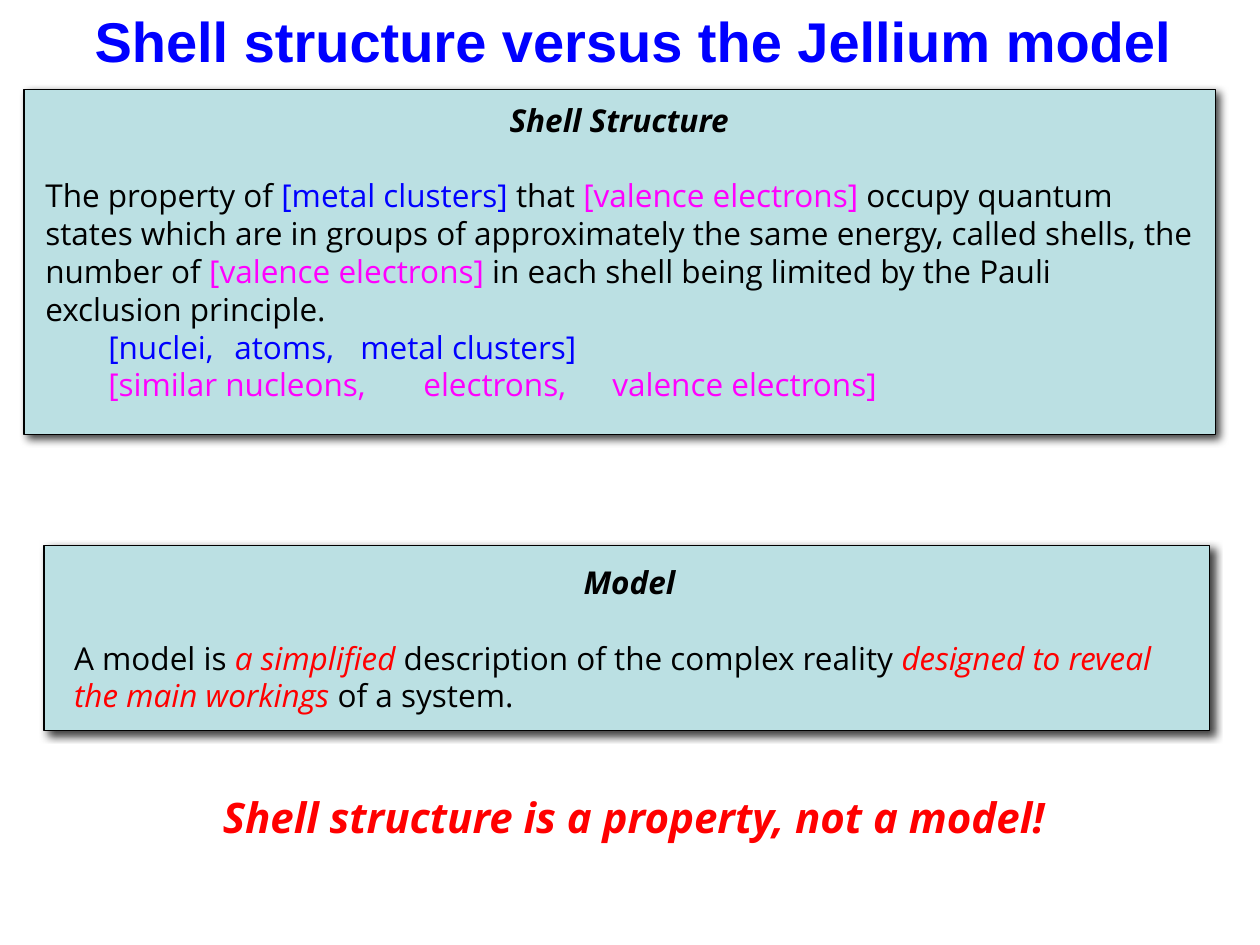
from lxml import etree
from pptx import Presentation
from pptx.dml.color import RGBColor
from pptx.enum import shapes, text
from pptx.oxml import ns
from pptx.util import Inches, Pt

BLACK = RGBColor(0x00, 0x00, 0x00)
BLUE = RGBColor(0x00, 0x00, 0xFF)
PINK = RGBColor(0xFF, 0x00, 0xFF)
RED = RGBColor(0xFF, 0x00, 0x00)
TEAL = RGBColor(0xBB, 0xE0, 0xE3)
CENTER = text.PP_ALIGN.CENTER
LEFT = text.PP_ALIGN.LEFT


def sub(node, tag, **attrs):
    child = etree.SubElement(node, ns.qn(tag))
    for key, val in attrs.items():
        child.set(key, str(val))
    return child


class Page:
    font = "Open Sans"
    size = 18
    gap = 21.6

    def __init__(self, slide):
        self.slide = slide

    def panel(self, *box):
        shape = self.slide.shapes.add_shape(
            shapes.MSO_SHAPE.RECTANGLE, *map(Inches, box))
        shape.fill.solid()
        shape.fill.fore_color.rgb = TEAL
        shape.line.color.rgb = BLACK
        shape.line.width = Pt(0.75)
        shape.shadow.inherit = False
        effects = shape._element.spPr.find(ns.qn("a:effectLst"))
        shade = sub(effects, "a:outerShdw", blurRad=Pt(5), dist=Pt(3),
                    dir=45 * 60000, algn="tl", rotWithShape=0)
        color = sub(shade, "a:srgbClr", val=BLACK)
        sub(color, "a:alpha", val=75000)

    def place(self, shape, *box, wrap=True):
        shape.left, shape.top, shape.width, shape.height = map(Inches, box)
        frame = shape.text_frame
        frame.word_wrap = wrap
        frame.auto_size = text.MSO_AUTO_SIZE.NONE
        frame.vertical_anchor = text.MSO_ANCHOR.TOP
        self.slide.shapes._spTree.append(shape._element)
        return frame

    def box(self, *box, wrap=True):
        shape = self.slide.shapes.add_textbox(*map(Inches, box))
        return self.place(shape, *box, wrap=wrap)

    def para(self, frame, runs, align=LEFT, after=0, tabs=()):
        para = frame.paragraphs[0]
        if para.runs:
            para = frame.add_paragraph()
        para.alignment = align
        para.space_before = Pt(0)
        para.space_after = Pt(after)
        props = para._p.get_or_add_pPr()
        props.set("marL", "0")
        props.set("indent", "0")
        sub(props, "a:buNone")
        if tabs:
            stops = sub(props, "a:tabLst")
            for pos in tabs:
                sub(stops, "a:tab", pos=Inches(pos), algn="l")
        for words, color, *style in runs:
            self.run(para, words, color, *style)

    def run(self, para, words, color, bold=False, italic=False,
            size=None, font=None):
        run = para.add_run()
        run.text = words
        run.font.name = font or self.font
        run.font.size = Pt(size or self.size)
        run.font.bold = bold
        run.font.italic = italic
        run.font.color.rgb = color

    def head(self, frame, words):
        self.para(frame, [(words, BLACK, True, True)], CENTER, self.gap)


def main():
    deck = Presentation()
    deck.slide_width, deck.slide_height = Inches(10), Inches(7.5)
    slide = deck.slides.add_slide(deck.slide_layouts[1])
    page = Page(slide)
    title, body = slide.placeholders

    page.panel(0.19, 0.71, 9.46, 2.74)
    frame = page.place(body, 0.26, 0.75, 9.31, 2.5)
    page.head(frame, "Shell Structure")
    page.para(frame, [
        ("The property of ", BLACK),
        ("[metal clusters]", BLUE),
        (" that ", BLACK),
        ("[valence electrons]", PINK),
        (" occupy quantum states which are in groups of approximately "
         "the same energy, called shells, the number of ", BLACK),
        ("[valence electrons]", PINK),
        (" in each shell being limited by the Pauli exclusion principle.",
         BLACK),
    ])
    for words, color in (
        ("\t[nuclei,\tatoms,\tmetal clusters]", BLUE),
        ("\t[similar nucleons,\telectrons,\tvalence electrons]", PINK),
    ):
        page.para(frame, [(words, color)], tabs=(1, 4, 6))

    page.panel(0.35, 4.33, 9.25, 1.47)
    frame = page.box(0.49, 4.42, 9.01, 1.3)
    page.head(frame, "Model")
    page.para(frame, [
        ("A model is ", BLACK),
        ("a simplified", RED, False, True),
        (" description of the complex reality ", BLACK),
        ("designed to reveal the main workings", RED, False, True),
        (" of a system.", BLACK),
    ])

    frame = page.box(1.67, 6.23, 7.35, 0.5, wrap=False)
    page.para(frame, [("Shell structure is a property, not a model!",
                       RED, True, True, 24)])
    frame = page.place(title, 0.65, 0, 8.83, 0.64, wrap=False)
    page.para(frame, [("Shell structure versus the Jellium model",
                       BLUE, True, False, 32, "Arial")])
    deck.save("out.pptx")


if __name__ == "__main__":
    main()
